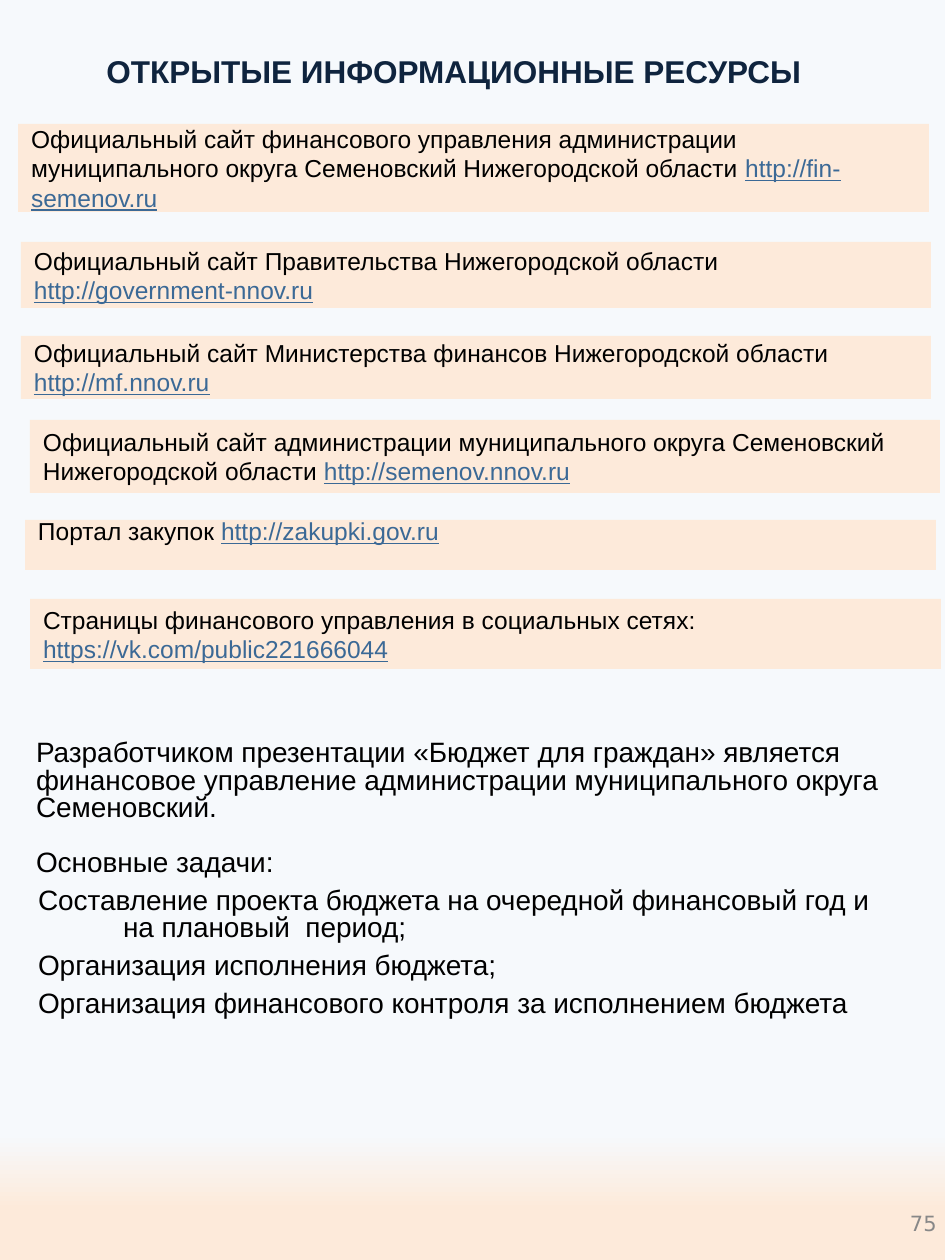
from pptx import Presentation
from pptx.dml.color import RGBColor
from pptx.enum.shapes import MSO_SHAPE
from pptx.enum.text import MSO_ANCHOR, MSO_AUTO_SIZE, PP_ALIGN
from pptx.util import Emu, Pt

RECTANGLE = MSO_SHAPE.RECTANGLE
MIDDLE, TOP = MSO_ANCHOR.MIDDLE, MSO_ANCHOR.TOP
LEFT, CENTER = PP_ALIGN.LEFT, PP_ALIGN.CENTER
NO_AUTOFIT = MSO_AUTO_SIZE.NONE

EMU_PER_PX = 914400 / 126
SLIDE_WIDTH, SLIDE_HEIGHT = 945, 1260
INSETS = (13, 6, 13, 6)
LINE_PITCH = 15.7

COLORS = {
    "sky": "F6F9FC",
    "peach": "FDEADA",
    "title": "0F243E",
    "text": "000000",
    "link": "3B6996",
    "number": "888888",
}

RESOURCES = [
    ((18, 124, 911, 88),
     "Официальный сайт финансового управления администрации муниципального округа "
     "Семеновский Нижегородской области ", "http://fin-semenov.ru"),
    ((21, 242, 910, 66),
     "Официальный сайт Правительства Нижегородской области ", "http://government-nnov.ru"),
    ((21, 336, 910, 63),
     "Официальный сайт Министерства финансов Нижегородской области ", "http://mf.nnov.ru"),
    ((30, 420, 910, 73),
     "Официальный сайт администрации муниципального округа Семеновский "
     "Нижегородской области ", "http://semenov.nnov.ru"),
    ((25, 520, 911, 50), "Портал закупок ", "http://zakupki.gov.ru"),
    ((30, 599, 911, 70),
     "Страницы финансового управления в социальных сетях: ",
     "https://vk.com/public221666044"),
]
PORTAL_INSETS = (13, 0, 13, 28)

DEVELOPER = ("Разработчиком презентации «Бюджет для граждан» является финансовое "
             "управление администрации муниципального округа Семеновский.")
TASKS_HEADING = "Основные задачи:"
TASKS = [
    ["Составление проекта бюджета на очередной финансовый год и", "на плановый  период;"],
    ["Организация исполнения бюджета;"],
    ["Организация финансового контроля за исполнением бюджета"],
]


def px(value):
    return Emu(round(value * EMU_PER_PX))


def color(name):
    return RGBColor.from_string(COLORS[name])


def add_run(paragraph, text, size, color_name, font="Arial", bold=False, underline=False):
    run = paragraph.add_run()
    run.text = text
    run.font.name = font
    run.font.size = Pt(size)
    run.font.bold = bold
    run.font.underline = underline
    run.font.color.rgb = color(color_name)


def prepare_frame(shape, insets=INSETS, anchor=TOP):
    frame = shape.text_frame
    frame.auto_size = NO_AUTOFIT
    frame.word_wrap = True
    frame.vertical_anchor = anchor
    frame.margin_left, frame.margin_top, frame.margin_right, frame.margin_bottom = map(px, insets)
    return frame


def add_text_frame(slide, box, insets=INSETS):
    return prepare_frame(slide.shapes.add_textbox(*map(px, box)), insets)


def paint_background(slide):
    fill = slide.background.fill
    fill.gradient()
    fill.gradient_angle = 270
    for stop, position, name in zip(fill.gradient_stops, (0.9, 0.96), ("sky", "peach")):
        stop.position = position
        stop.color.rgb = color(name)


def place_title(slide, box):
    title = slide.shapes.title
    title.left, title.top, title.width, title.height = map(px, box)
    paragraph = prepare_frame(title, anchor=MIDDLE).paragraphs[0]
    paragraph.alignment = CENTER
    add_run(paragraph, "ОТКРЫТЫЕ ИНФОРМАЦИОННЫЕ РЕСУРСЫ", 18, "title", bold=True)


def add_resource(slide, box, description, address, insets):
    panel = slide.shapes.add_shape(RECTANGLE, *map(px, box))
    panel.shadow.inherit = False
    panel.fill.solid()
    panel.fill.fore_color.rgb = color("peach")
    panel.line.fill.background()
    paragraph = prepare_frame(panel, insets, MIDDLE).paragraphs[0]
    paragraph.alignment = LEFT
    add_run(paragraph, description, 14, "text")
    add_run(paragraph, address, 14, "link", underline=True)


def add_body_paragraph(frame, lines, left, indent, space_before):
    paragraph = frame.add_paragraph() if frame.text else frame.paragraphs[0]
    properties = paragraph._p.get_or_add_pPr()
    properties.set("marL", str(px(left)))
    properties.set("indent", str(px(indent)))
    paragraph.line_spacing = Pt(LINE_PITCH)
    paragraph.space_before = Pt(space_before)
    for index, line in enumerate(lines):
        if index:
            paragraph.add_line_break()
        add_run(paragraph, line, 16, "text")


def add_developer_note(slide, box):
    frame = add_text_frame(slide, box)
    add_body_paragraph(frame, [DEVELOPER], 13, 0, 0)
    add_body_paragraph(frame, [TASKS_HEADING], 13, 0, LINE_PITCH)
    for lines in TASKS:
        add_body_paragraph(frame, lines, 100, -85, 5.8)


def add_page_number(slide, box):
    frame = add_text_frame(slide, box, (8, 0, 0, 0))
    add_run(frame.paragraphs[0], "75", 12, "number", font="DejaVu Sans")


def main():
    presentation = Presentation()
    presentation.slide_width = px(SLIDE_WIDTH)
    presentation.slide_height = px(SLIDE_HEIGHT)
    slide = presentation.slides.add_slide(presentation.slide_layouts[5])
    paint_background(slide)
    place_title(slide, (63, 46, 782, 50))
    for box, description, address in RESOURCES:
        insets = PORTAL_INSETS if description.startswith("Портал") else INSETS
        add_resource(slide, box, description, address, insets)
    add_developer_note(slide, (10, 735, 914, 299))
    add_page_number(slide, (902, 1211, 39, 32))
    presentation.save("out.pptx")


if __name__ == "__main__":
    main()
